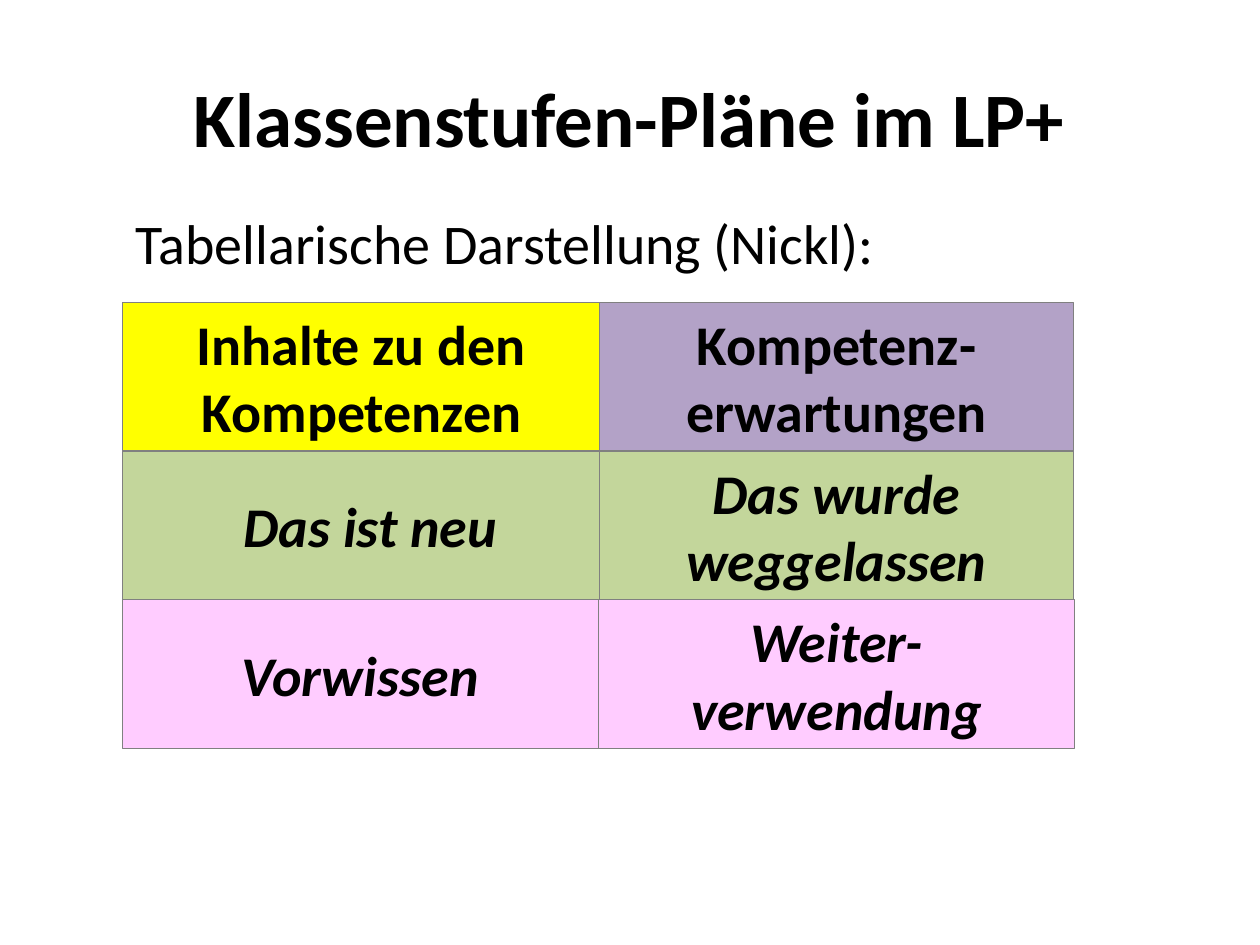
"""Build the slide with the table-like overview of class-level plans."""
from dataclasses import dataclass

from pptx import Presentation
from pptx import util as u
from pptx.dml.color import RGBColor
from pptx.enum import shapes, text

PX = 9144
FONT = "Calibri"
BLACK = RGBColor(0x00, 0x00, 0x00)
GREY = RGBColor(0x80, 0x80, 0x80)
YELLOW = RGBColor(0xFF, 0xFF, 0x00)
PURPLE = RGBColor(0xB3, 0xA2, 0xC7)
GREEN = RGBColor(0xC3, 0xD6, 0x9B)
PINK = RGBColor(0xFF, 0xCC, 0xFF)
LEFT, RIGHT = 97, 476
TOP, HIGH = 240, 118


@dataclass(frozen=True)
class Cell:
    """One coloured box of the overview."""

    row: int
    left: int
    width: int
    fill: RGBColor
    lines: tuple[str, ...]


CELLS = (
    Cell(0, LEFT, 380, YELLOW, ("Inhalte zu den", "Kompetenzen")),
    Cell(0, RIGHT, 376, PURPLE, ("Kompetenz-erwartungen",)),
    Cell(1, LEFT, 394, GREEN, ("Das ist neu",)),
    Cell(1, RIGHT, 376, GREEN, ("Das wurde weggelassen",)),
    Cell(2, LEFT, 378, PINK, ("Vorwissen",)),
    Cell(2, RIGHT - 1, 378, PINK, ("Weiter-", "verwendung")),
)


def place(shape, left: int, top: int, width: int, height: int) -> None:
    """Set the position and size of a shape in px."""
    shape.left, shape.top = left * PX, top * PX
    shape.width, shape.height = width * PX, height * PX


def write(frame, lines: tuple[str, ...], size: int, align: text.PP_ALIGN,
          bold: bool = False, slant: bool = False) -> None:
    """Fill a text frame with equally formatted paragraphs."""
    frame.word_wrap = True
    frame.text = "\n".join(lines)
    for para in frame.paragraphs:
        para.alignment = align
        font = para.font
        font.name, font.size = FONT, u.Pt(size)
        font.bold, font.italic = bold, slant
        font.color.rgb = BLACK


def draw(slide, cell: Cell) -> None:
    """Draw one box with its centred label."""
    box = slide.shapes.add_shape(
        shapes.MSO_SHAPE.RECTANGLE, cell.left * PX,
        (TOP + cell.row * HIGH) * PX, cell.width * PX, HIGH * PX)
    box.shadow.inherit = False
    box.fill.solid()
    box.fill.fore_color.rgb = cell.fill
    box.line.color.rgb = GREY
    box.line.width = u.Pt(0.75)
    box.text_frame.vertical_anchor = text.MSO_ANCHOR.MIDDLE
    write(box.text_frame, cell.lines, 32, text.PP_ALIGN.CENTER,
          bold=True, slant=cell.row > 0)


def main() -> None:
    """Build and save the slide."""
    deck = Presentation()
    deck.slide_width, deck.slide_height = 1000 * PX, 750 * PX
    slide = deck.slides.add_slide(deck.slide_layouts[5])
    title = slide.shapes.title
    place(title, 50, 30, 900, 125)
    title.text_frame.vertical_anchor = text.MSO_ANCHOR.MIDDLE
    write(title.text_frame, ("Klassenstufen-Pläne im LP+",), 44,
          text.PP_ALIGN.CENTER, bold=True)
    intro = slide.shapes.add_textbox(98 * PX, 161 * PX, 787 * PX, 64 * PX)
    write(intro.text_frame, ("Tabellarische Darstellung (Nickl):",), 32,
          text.PP_ALIGN.LEFT)
    for cell in CELLS:
        draw(slide, cell)
    deck.save("out.pptx")


if __name__ == "__main__":
    main()
